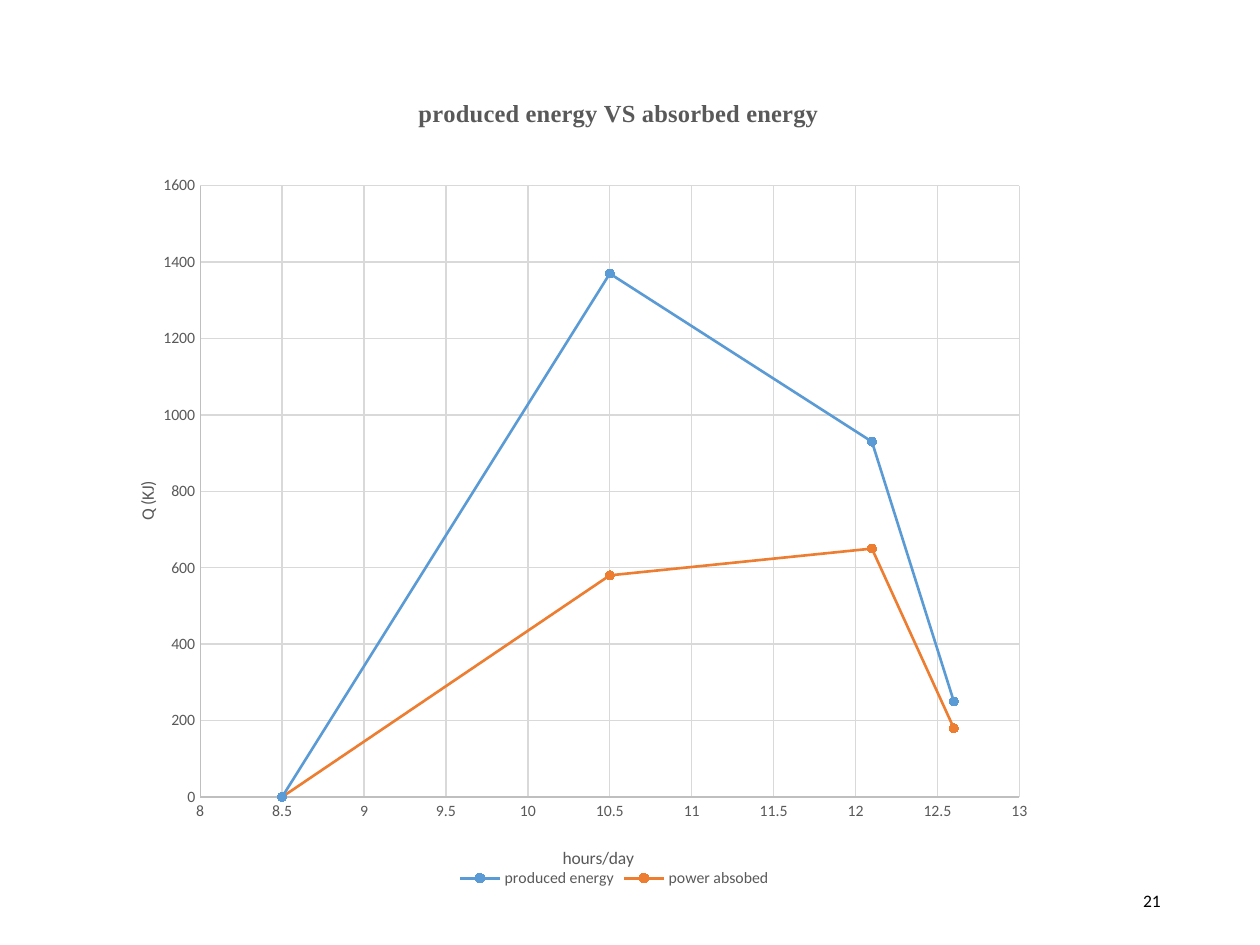
from lxml.etree import SubElement
from pptx import Presentation
from pptx.chart.data import XyChartData
from pptx.dml.color import RGBColor
from pptx.enum.chart import XL_CHART_TYPE as ChartType, XL_LEGEND_POSITION as LegendPos
from pptx.enum.chart import XL_MARKER_STYLE as Marker, XL_TICK_MARK as Tick
from pptx.enum.text import MSO_ANCHOR as Anchor, PP_ALIGN as Align
from pptx.oxml.ns import qn
from pptx.util import Pt

BLACK = RGBColor(0x00, 0x00, 0x00)
GREY = RGBColor(0x59, 0x59, 0x59)
AXIS_GREY = RGBColor(0xBF, 0xBF, 0xBF)
GRID_GREY = RGBColor(0xD9, 0xD9, 0xD9)
BLUE = RGBColor(0x5B, 0x9B, 0xD5)
ORANGE = RGBColor(0xED, 0x7D, 0x31)

HOURS = (8.5, 10.5, 12.1, 12.6)
SERIES = (
    ("produced energy", BLUE, (0, 1370, 930, 250)),
    ("power absobed", ORANGE, (0, 580, 650, 180)),
)


def set_font(font, size, color=GREY, name="Calibri", bold=False):
    values = {"size": Pt(size), "name": name, "bold": bold}
    for attr, value in values.items():
        setattr(font, attr, value)
    font.color.rgb = color


def set_line(line, color, width=0.75):
    line.color.rgb = color
    line.width = Pt(width)


def set_layout(element, **places):
    """Fix the place of a chart part, in fractions of the chart."""
    for old in element.findall(qn("c:layout")):
        element.remove(old)
    layout = SubElement(element, qn("c:layout"))
    manual = SubElement(layout, qn("c:manualLayout"))
    if "w" in places:
        SubElement(manual, qn("c:layoutTarget"), val="inner")
    for key in "xy":
        SubElement(manual, qn(f"c:{key}Mode"), val="edge")
    for key, value in places.items():
        SubElement(manual, qn(f"c:{key}"), val=str(value))
    return layout


def set_title(owner, text, x, y, **font):
    """Write and place the title of a chart or an axis."""
    title = owner.chart_title if hasattr(owner, "chart_title") else owner.axis_title
    p = title.text_frame.paragraphs[0]
    r = p.add_run()
    r.text = text
    set_font(r.font, **font)
    element = title._element
    layout = set_layout(element, x=x, y=y)
    element.find(qn("c:tx")).addnext(layout)


def format_axis(axis, low, high, step):
    values = {
        "minimum_scale": low, "maximum_scale": high, "major_unit": step,
        "major_tick_mark": Tick.NONE, "minor_tick_mark": Tick.NONE,
        "has_major_gridlines": True,
    }
    for attr, value in values.items():
        setattr(axis, attr, value)
    set_font(axis.tick_labels.font, 9)
    axis.tick_labels.number_format = "General"
    axis.tick_labels.number_format_is_linked = False
    set_line(axis.format.line, AXIS_GREY)
    set_line(axis.major_gridlines.format.line, GRID_GREY)


def format_series(series, color):
    series.smooth = False
    set_line(series.format.line, color, 1.5)
    marker = series.marker
    marker.style, marker.size = Marker.CIRCLE, 5
    marker.format.fill.solid()
    marker.format.fill.fore_color.rgb = color
    set_line(marker.format.line, color)


def add_energy_chart(s):
    data = XyChartData()
    for name, _, energies in SERIES:
        points = data.add_series(name)
        for hour, energy in zip(HOURS, energies):
            points.add_data_point(hour, energy)
    chart = s.shapes.add_chart(
        ChartType.XY_SCATTER_LINES, Pt(72), Pt(36), Pt(558), Pt(474), data).chart
    set_font(chart.font, 10, BLACK)
    set_title(chart, "produced energy VS absorbed energy", 0.295, 0.036,
              size=14, name="Times New Roman", bold=True)

    # Axes and plot area
    format_axis(chart.category_axis, 8, 13, 0.5)
    format_axis(chart.value_axis, 0, 1600, 200)
    set_title(chart.category_axis, "hours/day", 0.444, 0.941, size=10)
    set_title(chart.value_axis, "Q (KJ)", 0.007, 0.5, size=10)
    plot = chart.plots[0]
    plot.vary_by_categories = False
    area = chart._chartSpace.chart.plotArea
    area.insert(0, set_layout(area, x=0.076, y=0.148, w=0.839, h=0.737))

    # Series and legend
    for series, (_, color, _) in zip(plot.series, SERIES):
        format_series(series, color)
    chart.has_legend = True
    chart.legend.position = LegendPos.BOTTOM
    chart.legend.include_in_layout = False
    set_font(chart.legend.font, 9)


def add_page_number(s, text):
    tf = s.shapes.add_textbox(Pt(508.3), Pt(500.4), Pt(162), Pt(28.8)).text_frame
    tf.word_wrap = True
    tf.vertical_anchor = Anchor.MIDDLE
    p = tf.paragraphs[0]
    p.alignment = Align.RIGHT
    r = p.add_run()
    r.text = text
    set_font(r.font, 10, BLACK)


def main():
    prs = Presentation()
    prs.slide_width, prs.slide_height = Pt(720), Pt(540)
    s = prs.slides.add_slide(prs.slide_layouts[6])
    add_energy_chart(s)
    add_page_number(s, "21")
    prs.save("out.pptx")


if __name__ == "__main__":
    main()
